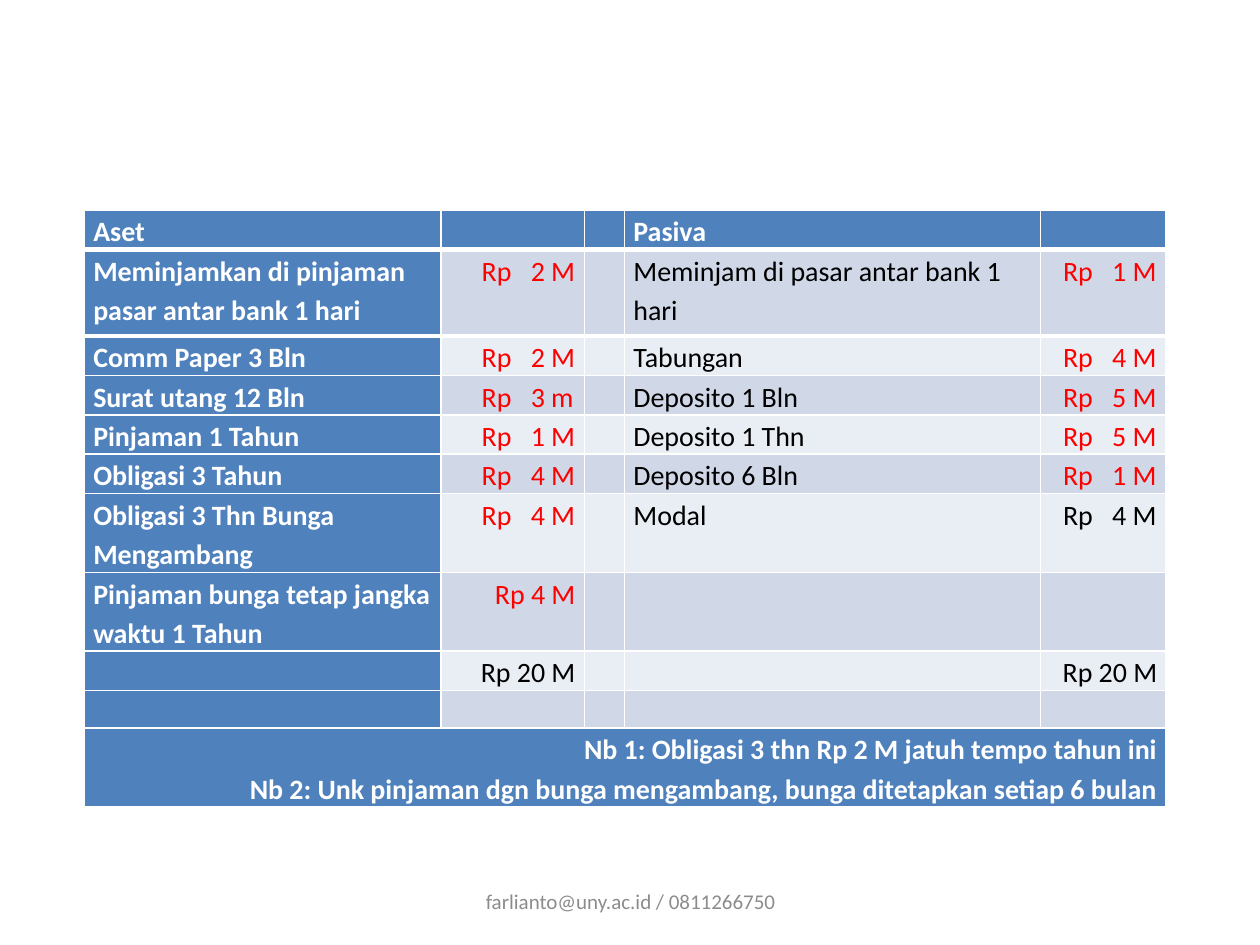
"""Build a bank balance sheet slide with assets, liabilities and two notes."""
import pptx
import pptx.dml.color
import pptx.enum.text
import pptx.oxml
import pptx.oxml.ns
import pptx.util

Cm = pptx.util.Cm
Align = pptx.enum.text.PP_ALIGN
BLUE, WHITE, BLACK, RED = "4F81BD", "FFFFFF", "000000", "FF0000"
BANDS = ["E9EDF4", "D0D8E8"]


def paint(color_format, hex_color):
    color_format.rgb = pptx.dml.color.RGBColor.from_string(hex_color)


def style(paragraph, size, color, bold=False):
    paragraph.font.name = "Calibri"
    paragraph.font.size = pptx.util.Pt(size)
    paragraph.font.bold = bold
    paint(paragraph.font.color, color)


deck = pptx.Presentation()
deck.slide_width, deck.slide_height = Cm(25.4), Cm(19.05)
slide = deck.slides.add_slide(deck.slide_layouts[6])

notes = (
    "Nb 1: Obligasi 3 thn Rp 2 M jatuh tempo tahun ini\n"
    "Nb 2: Unk pinjaman dgn bunga mengambang, bunga ditetapkan setiap 6 bulan"
)
balance = [
    ("Aset", "", "", "Pasiva", ""),
    ("Meminjamkan di pinjaman pasar antar bank 1 hari", "Rp\t2 M", "",
     "Meminjam di pasar antar bank 1 hari", "Rp\t1 M"),
    ("Comm Paper 3 Bln", "Rp\t2 M", "", "Tabungan", "Rp\t4 M"),
    ("Surat utang 12 Bln", "Rp\t3 m", "", "Deposito 1 Bln", "Rp\t5 M"),
    ("Pinjaman 1 Tahun", "Rp\t1 M", "", "Deposito 1 Thn", "Rp\t5 M"),
    ("Obligasi 3 Tahun", "Rp\t4 M", "", "Deposito 6 Bln", "Rp\t1 M"),
    ("Obligasi 3 Thn Bunga Mengambang", "Rp\t4 M", "", "Modal", "Rp\t4 M"),
    ("Pinjaman bunga tetap jangka waktu 1 Tahun", "Rp 4 M", "", "", ""),
    ("", "Rp 20 M", "", "", "Rp 20 M"),
    ("", "", "", "", ""),
    (notes, "", "", "", ""),
]
column_widths = [7.19, 2.89, 0.81, 8.39, 2.53]
row_heights = [0.76, 1.75, 0.76, 0.76, 0.76, 0.76, 1.57, 1.57, 0.76, 0.76, 1.57]
amount_indents = {1: 0.82, 4: 0.45}
black_amounts = [(6, 4), (8, 1), (8, 4)]
header_edges = {0: "lnB", 1: "lnT"}
last_row = len(balance) - 1

sheet = slide.shapes.add_table(
    len(balance), len(column_widths), Cm(1.7), Cm(4.23),
    Cm(sum(column_widths)), Cm(sum(row_heights))).table
sheet.first_col = True
for column, width in zip(sheet.columns, column_widths):
    column.width = Cm(width)
for row, height in zip(sheet.rows, row_heights):
    row.height = Cm(height)
sheet.cell(last_row, 0).merge(sheet.cell(last_row, 4))

for r, entries in enumerate(balance):
    for c, entry in enumerate(entries):
        cell = sheet.cell(r, c)
        heading = r in (0, last_row) or c == 0
        is_amount = c in amount_indents and not heading
        tabbed = "\t" in entry
        cell.margin_left = Cm(amount_indents[c] if tabbed else 0.18)
        cell.margin_right = Cm(0.05 if tabbed else 0.18)
        cell.margin_top = cell.margin_bottom = 0
        cell.fill.solid()
        paint(cell.fill.fore_color, BLUE if heading else BANDS[r % 2])
        if r in header_edges:
            edge = header_edges[r]
            cell._tc.get_or_add_tcPr().insert(0, pptx.oxml.parse_xml(
                f'<a:{edge} {pptx.oxml.ns.nsdecls("a")} w="{pptx.util.Pt(3)}">'
                f'<a:solidFill><a:srgbClr val="{WHITE}"/></a:solidFill></a:{edge}>'))
        cell.text = entry
        for paragraph in cell.text_frame.paragraphs:
            paragraph.line_spacing = 1.15
            if tabbed:
                tabs = pptx.oxml.parse_xml(
                    f'<a:tabLst {pptx.oxml.ns.nsdecls("a")}>'
                    f'<a:tab pos="{Cm(0.99)}" algn="l"/></a:tabLst>')
                paragraph._p.get_or_add_pPr().append(tabs)
            elif is_amount or r == last_row:
                paragraph.alignment = Align.RIGHT
            red = is_amount and (r, c) not in black_amounts
            style(paragraph, 16, WHITE if heading else RED if red else BLACK, heading)

contact = slide.shapes.add_textbox(Cm(8.69), Cm(17.65), Cm(8.05), Cm(1.02)).text_frame
contact.word_wrap = True
contact.vertical_anchor = pptx.enum.text.MSO_ANCHOR.MIDDLE
contact.text = "farlianto@uny.ac.id / 0811266750"
contact.paragraphs[0].alignment = Align.CENTER
style(contact.paragraphs[0], 12, "8C8C8C")

deck.save("out.pptx")
